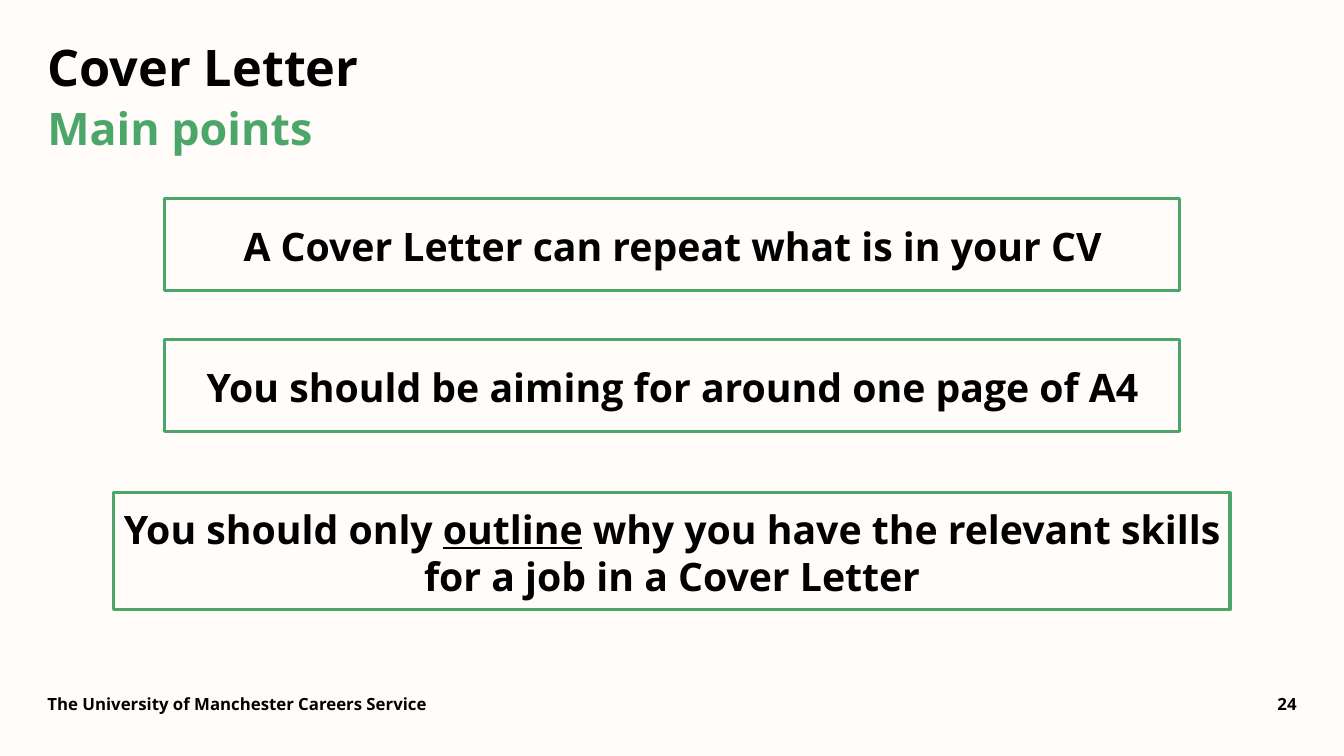
import pptx
import pptx.util
import pptx.dml.color
import pptx.enum.shapes
import pptx.enum.text

Inches = pptx.util.Inches
Align = pptx.enum.text.PP_ALIGN
Anchor = pptx.enum.text.MSO_ANCHOR

BLACK = "000000"
GREEN = "4DA669"
CREAM = "FFFCF9"


def color(value):
    return pptx.dml.color.RGBColor.from_string(value)


class SlideBuilder:
    font_name = "Open Sans"

    def __init__(self, slide):
        self.slide = slide

    def background(self, fill):
        self.slide.background.fill.solid()
        self.slide.background.fill.fore_color.rgb = color(fill)

    def frame(self, left, top, width, height):
        shape = self.slide.shapes.add_shape(
            pptx.enum.shapes.MSO_SHAPE.RECTANGLE,
            Inches(left), Inches(top), Inches(width), Inches(height))
        shape.shadow.inherit = False
        shape.fill.background()
        shape.line.color.rgb = color(GREEN)
        shape.line.width = pptx.util.Pt(2.25)

    def text(self, box, runs, size, align=Align.LEFT, anchor=Anchor.TOP, spacing=None):
        shape = self.slide.shapes.add_textbox(*map(Inches, box))
        frame = shape.text_frame
        frame_format = {"word_wrap": True, "vertical_anchor": anchor,
                        "margin_left": 0, "margin_right": 0,
                        "margin_top": 0, "margin_bottom": 0}
        for name, value in frame_format.items():
            setattr(frame, name, value)
        paragraph = frame.paragraphs[0]
        paragraph.alignment = align
        paragraph.line_spacing = spacing
        for words, changes in runs:
            if changes.get("new_line"):
                paragraph.add_line_break()
            run = paragraph.add_run()
            run.text = words
            font_format = {"name": self.font_name, "bold": True,
                           "size": pptx.util.Pt(changes.get("size", size)),
                           "underline": changes.get("underline")}
            for name, value in font_format.items():
                setattr(run.font, name, value)
            run.font.color.rgb = color(changes.get("color", BLACK))


def main():
    presentation = pptx.Presentation()
    presentation.slide_width = Inches(13.33)
    presentation.slide_height = Inches(7.5)
    builder = SlideBuilder(presentation.slides.add_slide(presentation.slide_layouts[6]))
    builder.background(CREAM)

    builder.text((0.47, 0.37, 9.67, 1.25),
                 [("Cover Letter", {}),
                  ("Main points", {"new_line": True, "size": 32, "color": GREEN})],
                 36, spacing=pptx.util.Pt(42))

    points = [
        ((1.63, 1.97, 10.07, 0.91), (2.14, 2.21, 9.06, 0.47),
         [("A Cover Letter can repeat what is in your CV", {})]),
        ((1.63, 3.37, 10.07, 0.91), (1.48, 3.6, 10.38, 0.47),
         [("You should be aiming for around one page of A4", {})]),
        ((1.13, 4.89, 11.07, 1.16), (1.13, 5.01, 11.07, 1.07),
         [("You should only ", {}), ("outline", {"underline": True}),
          (" why you have the relevant skills for a job in a Cover Letter", {})]),
    ]
    for frame, box, runs in points:
        builder.frame(*frame)
        builder.text(box, runs, 28, Align.CENTER)

    builder.text((0.47, 6.69, 9.25, 0.39),
                 [("The University of Manchester Careers Service", {})],
                 12, anchor=Anchor.BOTTOM)
    builder.text((11.68, 6.69, 1.18, 0.39), [("24", {})],
                 12, Align.RIGHT, Anchor.BOTTOM)
    presentation.save("out.pptx")


if __name__ == "__main__":
    main()
